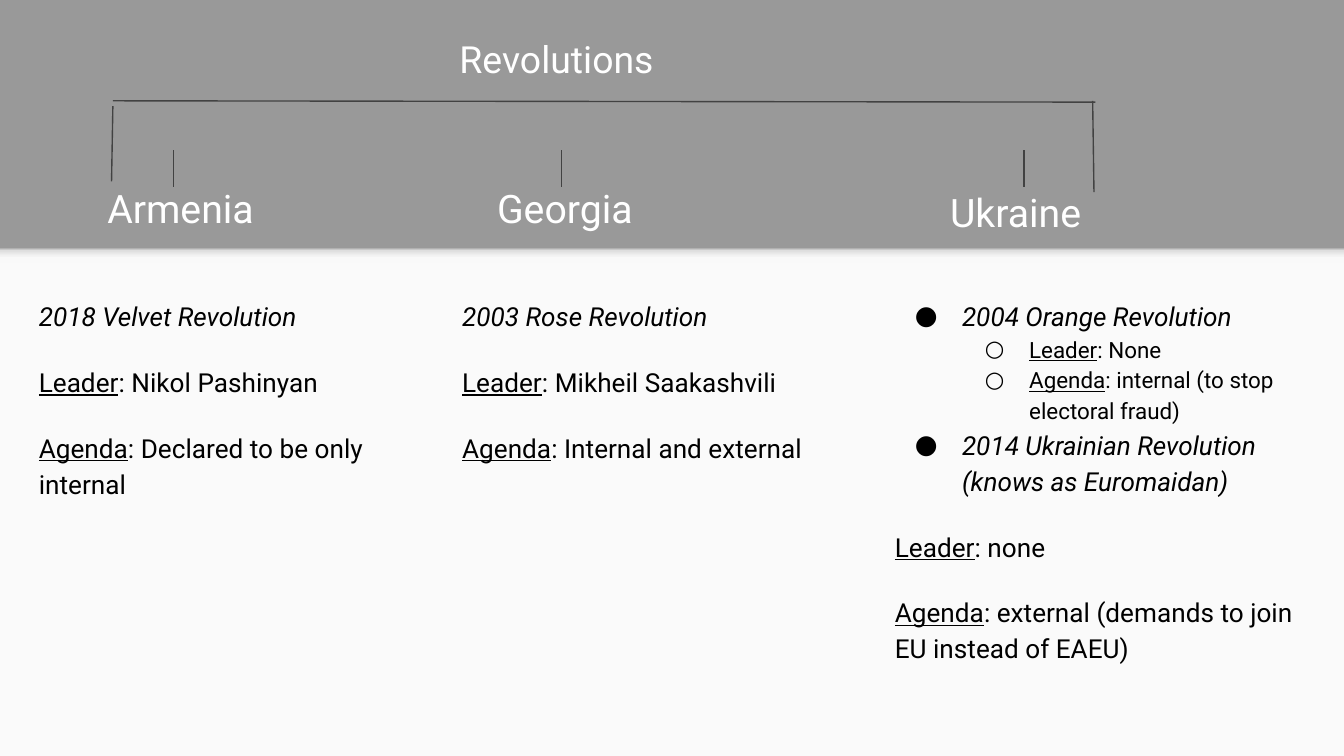
from lxml import etree
from pptx import Presentation
from pptx.dml.color import RGBColor
from pptx.enum.shapes import MSO_CONNECTOR, MSO_SHAPE
from pptx.enum.text import MSO_ANCHOR
from pptx.oxml.ns import qn
from pptx.util import Inches, Pt

RECTANGLE = MSO_SHAPE.RECTANGLE
STRAIGHT = MSO_CONNECTOR.STRAIGHT
TOP, BOTTOM = MSO_ANCHOR.TOP, MSO_ANCHOR.BOTTOM

WIDTH = 10
HEIGHT = WIDTH * 9 / 16
HEADER_BOTTOM = 1.84
FONT = "Roboto"
GREY, PAPER, WHITE, BLACK, LINE = "999999", "FAFAFA", "FFFFFF", "000000", "424242"
SHADOW_STOPS = [(0, "F9F9F9"), (36, "F9F9F9"), (80, "DEDEDE"), (100, GREY)]

# Bullet level: (character, left indent, hanging indent, text size)
BULLETS = {0: ("●", 0.5, 0.35, 14), 1: ("○", 1, 0.33, 12)}

# Country: heading box, body box, then (text, bullet level or None) lines
COUNTRIES = [
    ("Armenia", (0.7, 1.33, 2.81, 0.49), (0.19, 2.1, 3.15, 3.1), [
        ("2018 Velvet Revolution", None),
        ("Leader: Nikol Pashinyan", None),
        ("Agenda: Declared to be only internal", None),
    ]),
    ("Georgia", (3.6, 1.27, 2.81, 0.55), (3.34, 2.1, 3.15, 3.1), [
        ("2003 Rose Revolution", None),
        ("Leader: Mikheil Saakashvili", None),
        ("Agenda: Internal and external", None),
    ]),
    ("Ukraine", (6.97, 1.3, 2.81, 0.55), (6.56, 2.1, 3.33, 3.17), [
        ("2004 Orange Revolution", 0),
        ("Leader: None", 1),
        ("Agenda: internal (to stop electoral fraud)", 1),
        ("2014 Ukrainian Revolution (knows as Euromaidan)", 0),
        ("Leader: none", None),
        ("Agenda: external (demands to join EU instead of EAEU)", None),
    ]),
]

BRACKET = [(0.84, 0.79, 0.83, 1.35), (0.84, 0.75, 8.15, 0.76), (8.13, 0.75, 8.14, 1.43)]
TICKS = [(x, 1.12, x, 1.39) for x in (1.29, 4.18, 7.62)]


def rgb(value):
    return RGBColor.from_string(value)


def add_panel(slide, top, height, color):
    panel = slide.shapes.add_shape(
        RECTANGLE, 0, Inches(top), Inches(WIDTH), Inches(height))
    panel.shadow.inherit = False
    panel.line.fill.background()
    panel.fill.solid()
    panel.fill.fore_color.rgb = rgb(color)
    return panel


def shade(panel, stops):
    """Fill a panel with a gradient that runs from its bottom to its top."""
    panel.fill.gradient()
    panel.fill.gradient_angle = 90
    stop_list = panel.element.spPr.find(qn("a:gradFill")).find(qn("a:gsLst"))
    for old_stop in list(stop_list):
        stop_list.remove(old_stop)
    for position, color in stops:
        stop = etree.SubElement(stop_list, qn("a:gs"), pos=str(position * 1000))
        etree.SubElement(stop, qn("a:srgbClr"), val=color)


def add_frame(slide, box, anchor=TOP):
    frame = slide.shapes.add_textbox(*map(Inches, box)).text_frame
    frame.word_wrap = True
    frame.vertical_anchor = anchor
    frame.margin_left = frame.margin_right = Inches(0.1)
    frame.margin_top = frame.margin_bottom = Inches(0.1)
    return frame


def set_font(paragraph, size, color):
    paragraph.font.name = FONT
    paragraph.font.size = Pt(size)
    paragraph.font.color.rgb = rgb(color)


def add_heading(slide, text, box, size, anchor=TOP):
    heading = add_frame(slide, box, anchor).paragraphs[0]
    heading.add_run().text = text
    set_font(heading, size, WHITE)


def add_bullet(paragraph, level):
    """Give the paragraph its bullet and return the text size of that level."""
    character, indent, hanging, size = BULLETS[level]
    paragraph.level = level
    properties = paragraph._p.get_or_add_pPr()
    properties.set("marL", str(Inches(indent)))
    properties.set("indent", str(-Inches(hanging)))
    color = etree.SubElement(properties, qn("a:buClr"))
    etree.SubElement(color, qn("a:srgbClr"), val=BLACK)
    etree.SubElement(properties, qn("a:buSzPts"), val=str(size * 100))
    etree.SubElement(properties, qn("a:buFont"), typeface=FONT)
    etree.SubElement(properties, qn("a:buChar"), char=character)
    return size


def add_facts(slide, facts, box):
    """Event names are italic; the label before a colon is underlined."""
    frame = add_frame(slide, box)
    for number, (text, level) in enumerate(facts):
        fact = frame.add_paragraph() if number else frame.paragraphs[0]
        size = 14 if level is None else add_bullet(fact, level)
        set_font(fact, size, BLACK)
        fact.line_spacing = 1.15
        if number and level is None:
            fact.space_before = Pt(16)
        label, colon, detail = text.partition(":")
        lead = fact.add_run()
        lead.text = label
        if colon:
            lead.font.underline = True
            fact.add_run().text = colon + detail
        else:
            fact.font.italic = True


def add_line(slide, ends):
    line = slide.shapes.add_connector(STRAIGHT, *map(Inches, ends))
    line.line.color.rgb = rgb(LINE)
    line.line.width = Pt(0.75)
    etree.SubElement(line.element.spPr, qn("a:effectLst"))


def main():
    deck = Presentation()
    deck.slide_width, deck.slide_height = Inches(WIDTH), Inches(HEIGHT)
    slide = deck.slides.add_slide(deck.slide_layouts[6])

    # Grey header over a light panel with a soft shadow edge
    slide.background.fill.solid()
    slide.background.fill.fore_color.rgb = rgb(GREY)
    add_panel(slide, HEADER_BOTTOM, HEIGHT - HEADER_BOTTOM, PAPER)
    shade(add_panel(slide, HEADER_BOTTOM, 0.12, PAPER), SHADOW_STOPS)

    # Title and country columns
    add_heading(slide, "Revolutions", (3.32, 0.17, 1.91, 0.49), 20)
    for country, heading_box, facts_box, facts in COUNTRIES:
        add_heading(slide, country, heading_box, 21, BOTTOM)
        add_facts(slide, facts, facts_box)

    # Bracket from the title to the countries
    for ends in TICKS + BRACKET:
        add_line(slide, ends)

    deck.save("out.pptx")


if __name__ == "__main__":
    main()
